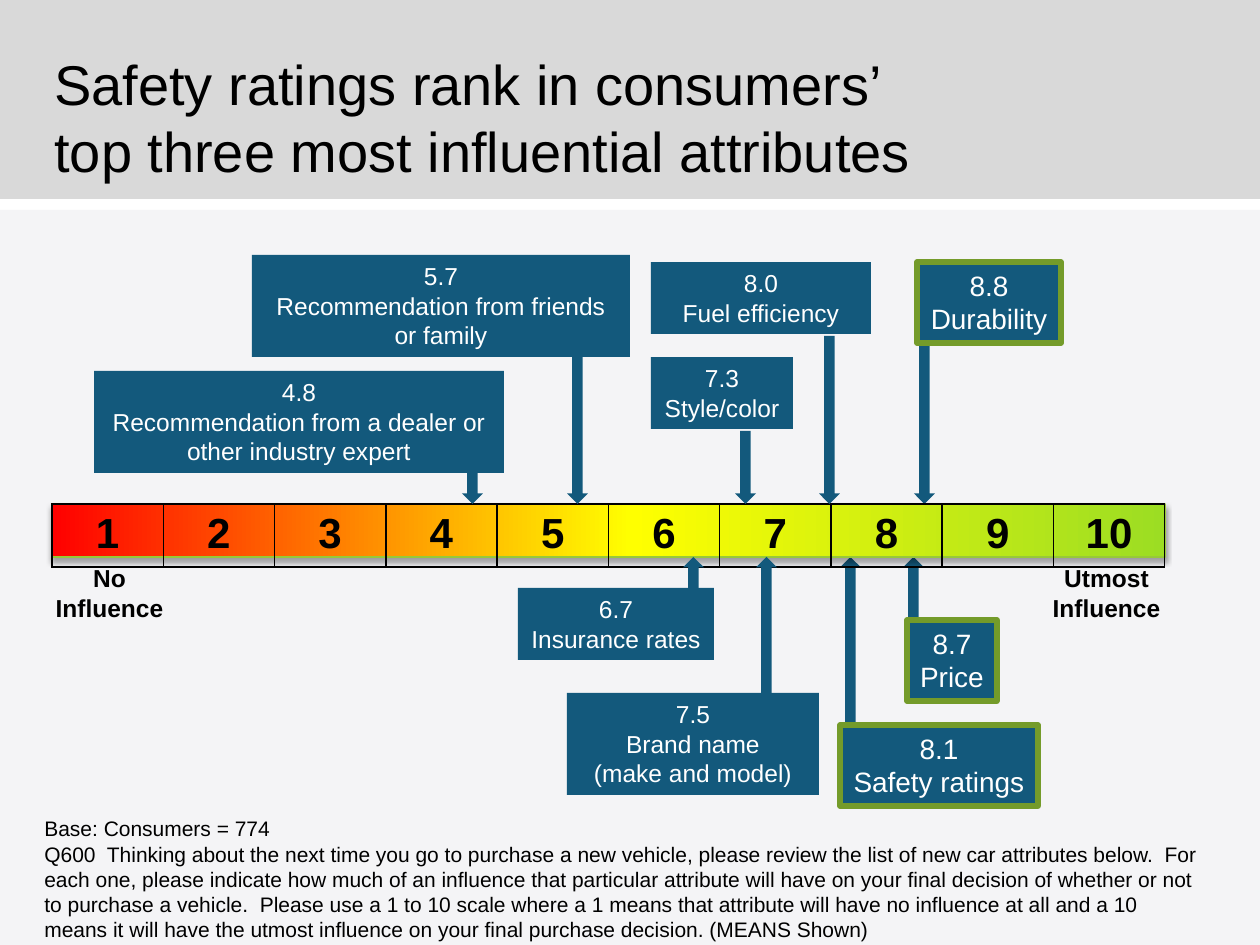
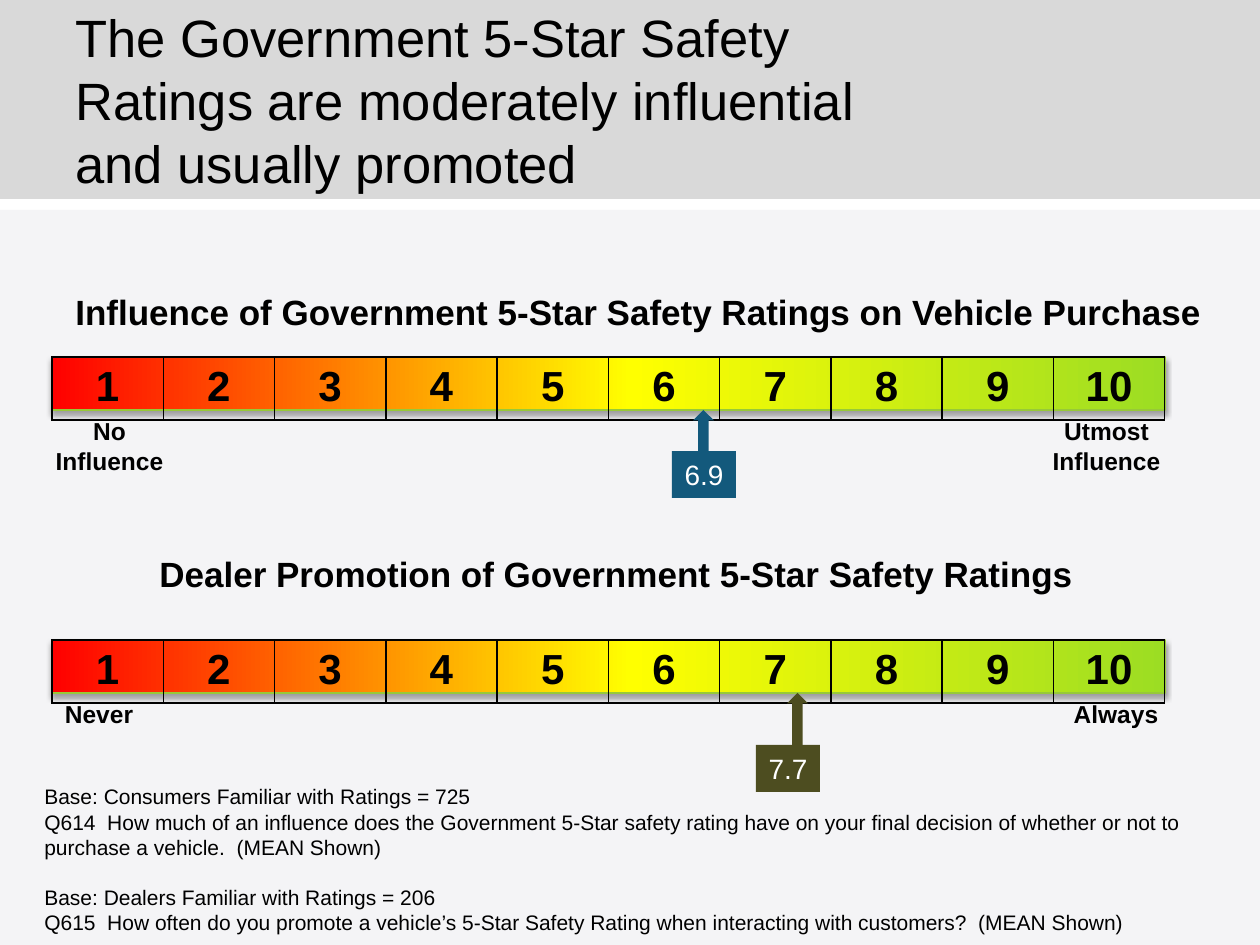
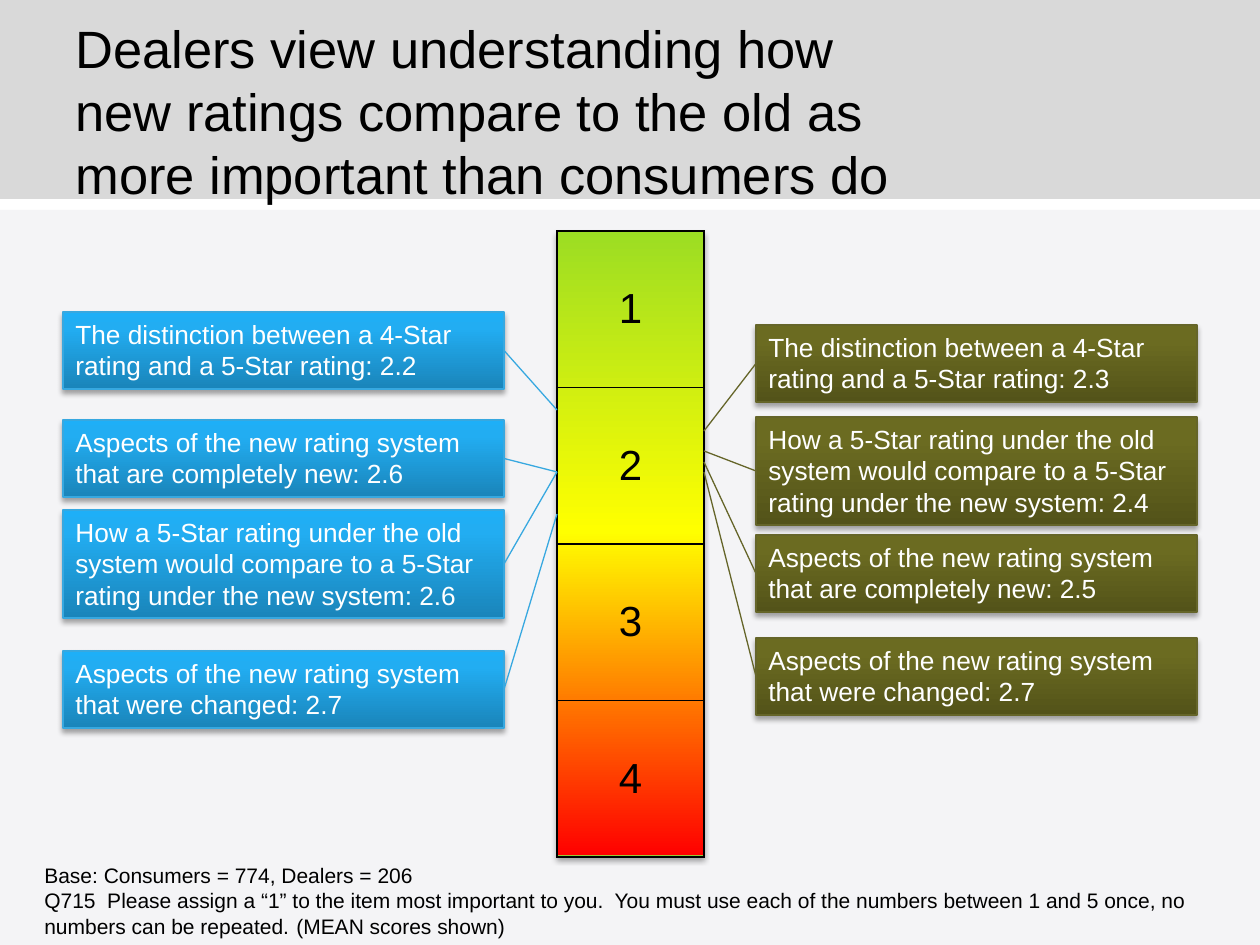
import pptx
import pptx.dml.color
import pptx.enum.shapes
import pptx.enum.text
import pptx.oxml.ns
import pptx.util
from lxml import etree

EMU_PER_PX = 914400 / 126
FONT = "Arial"
COLORS = {
    "white": "FFFFFF", "black": "000000", "band": "D9D9D9", "body": "F4F4F6",
    "navy": "13597C", "olive": "4D4D20", "highlight": "749B2A",
    "bar_line": "97C938", "blue_line": "37A8E0", "olive_line": "656529",
}
SCALE_STOPS = [(0, "FF0000"), (52, "FFFF00"), (100, "9CDD23")]
BLUE_STOPS = [(0, "1A85BA"), (80, "22ADF2"), (100, "1EAFF7")]
OLIVE_STOPS = [(0, "535319"), (80, "6B6B21"), (100, "6D6D20")]

BAR_LEFT, BAR_WIDTH, BAR_HEIGHT = 52, 1113, 53
ARROW_WIDTH = 21

# Text and box height of each rated topic
TOPICS = {
    "stars": ("The distinction between a 4-Star rating and a 5-Star rating", 77),
    "new": ("Aspects of the new rating system that are completely new", 77),
    "compare": ("How a 5-Star rating under the old system would compare to "
                "a 5-Star rating under the new system", 108),
    "changed": ("Aspects of the new rating system that were changed", 77),
}

SHAPE = pptx.enum.shapes.MSO_SHAPE
ALIGN = pptx.enum.text.PP_ALIGN
ANCHOR = pptx.enum.text.MSO_ANCHOR
qn = pptx.oxml.ns.qn


def px(n):
    return pptx.util.Emu(round(n * EMU_PER_PX))


def rgb(name):
    return pptx.dml.color.RGBColor.from_string(COLORS[name])


def sub(parent, tag, **attrs):
    el = etree.SubElement(parent, qn(tag))
    for key, value in attrs.items():
        el.set(key, str(value))
    return el


def write(tf, text, size, color="black", bold=False, align=ALIGN.LEFT, gaps=None):
    """Write one paragraph per line; gaps maps a line index to its space before."""
    for i, line in enumerate(text.split("\n")):
        p = tf.paragraphs[0] if i == 0 else tf.add_paragraph()
        p.alignment = align
        if gaps and i in gaps:
            p.space_before = pptx.util.Pt(gaps[i])
        r = p.add_run()
        r.text = line
        r.font.name, r.font.size, r.font.bold = FONT, pptx.util.Pt(size), bold
        r.font.color.rgb = rgb(color)


def frame(sp, wrap=True, grow=True, anchor=ANCHOR.TOP):
    tf = sp.text_frame
    tf.word_wrap = wrap
    tf.vertical_anchor = anchor
    if grow:
        tf.auto_size = pptx.enum.text.MSO_AUTO_SIZE.SHAPE_TO_FIT_TEXT
    return tf


def label(s, x, y, w, h, text, size, wrap=False, grow=True, anchor=ANCHOR.TOP, **fmt):
    sp = s.shapes.add_textbox(px(x), px(y), px(w), px(h))
    write(frame(sp, wrap, grow, anchor), text, size, **fmt)


def shape(s, x, y, w, h, fill=None, line=None, line_width=0.75, kind=SHAPE.RECTANGLE):
    sp = s.shapes.add_shape(kind, px(x), px(y), px(w), px(h))
    sp.shadow.inherit = False
    if fill:
        sp.fill.solid()
        sp.fill.fore_color.rgb = rgb(fill)
    if line:
        sp.line.color.rgb = rgb(line)
        sp.line.width = pptx.util.Pt(line_width)
    else:
        sp.line.fill.background()
    return sp


def shade(sp, stops, angle):
    """Give a shape a linear gradient and a soft shadow below it."""
    sp.fill.gradient()
    spPr = sp._element.spPr
    grad = spPr.find(qn("a:gradFill"))
    grad.set("rotWithShape", "1")
    gs_list = grad.find(qn("a:gsLst"))
    for gs in list(gs_list):
        gs_list.remove(gs)
    for pos, color in stops:
        sub(sub(gs_list, "a:gs", pos=pos * 1000), "a:srgbClr", val=color)
    grad.find(qn("a:lin")).set("ang", str(angle * 60000))
    shadow = sub(spPr.find(qn("a:effectLst")), "a:outerShdw", blurRad=39370,
                 dist=22860, dir=5400000, rotWithShape=0)
    sub(sub(shadow, "a:srgbClr", val=COLORS["black"]), "a:alpha", val=35000)


def border(cell):
    tcPr = cell._tc.get_or_add_tcPr()
    for i, side in enumerate(("a:lnL", "a:lnR", "a:lnT", "a:lnB")):
        ln = etree.Element(qn(side), w="12700")
        sub(sub(ln, "a:solidFill"), "a:srgbClr", val=COLORS["black"])
        tcPr.insert(i, ln)


def number_table(s, x, y, w, h, rows, cols, bold, anchor):
    table = s.shapes.add_table(rows, cols, px(x), px(y), px(w), px(h)).table
    table.first_row = table.horz_banding = False
    for n, cell in enumerate(table.iter_cells(), 1):
        cell.fill.background()
        cell.vertical_anchor = anchor
        border(cell)
        write(cell.text_frame, str(n), 24, bold=bold, align=ALIGN.CENTER)


def ten_point_scale(s, y):
    bar = shape(s, BAR_LEFT, y, BAR_WIDTH, BAR_HEIGHT, line="bar_line")
    shade(bar, SCALE_STOPS, 0)
    number_table(s, BAR_LEFT, y, BAR_WIDTH, 52, 1, 10, True, ANCHOR.TOP)


def end_label(s, x, y, w, text):
    label(s, x, y, w, 72 if "\n" in text else 43, text, 14, bold=True, align=ALIGN.CENTER)


def influence_labels(s, y):
    end_label(s, 42, y, 135, "No\nInfluence")
    end_label(s, 1039, y, 135, "Utmost\nInfluence")


def arrow(s, x, start, tip, color):
    kind = SHAPE.UP_ARROW if tip < start else SHAPE.DOWN_ARROW
    shape(s, x, min(start, tip), ARROW_WIDTH, abs(tip - start), color, kind=kind)


def callout(s, box, text, arrow_x, start, tip, size=14, color="navy", line=None, wrap=True):
    """Draw a box of text and the arrow from it to the scale."""
    arrow(s, arrow_x, start, tip, color)
    sp = shape(s, *box, color, line, 3)
    write(frame(sp, wrap), text, size, "white", align=ALIGN.CENTER)


def topic_boxes(s, x, stops, line, site, scale_x, ratings):
    """Draw one side's rated topics, each joined to its place on the scale."""
    for y, topic, score, scale_y in ratings:
        text, h = TOPICS[topic]
        sp = shape(s, x, y, 441, h, line=line)
        shade(sp, stops, 270)
        write(frame(sp), f"{text}: {score}", 15, "white")
        cxn = s.shapes.add_connector(pptx.enum.shapes.MSO_CONNECTOR.STRAIGHT,
                                     px(x), px(y), px(scale_x), px(scale_y))
        cxn.begin_connect(sp, site)
        cxn.line.color.rgb = rgb(line)
        cxn.line.width = pptx.util.Pt(0.75)
        sub(cxn._element.spPr, "a:effectLst")


def new_slide(prs, title, title_box, title_size, base, base_y, base_h, gaps=None):
    s = prs.slides.add_slide(prs.slide_layouts[6])
    shape(s, 0, 0, 1260, 199, "band")
    shape(s, 0, 210, 1260, 735, "body")
    label(s, *title_box, title, title_size, wrap=True, grow=False, anchor=ANCHOR.MIDDLE)
    label(s, 32, base_y, 1187, base_h, base, 12, wrap=True, anchor=ANCHOR.MIDDLE, gaps=gaps)
    return s


def attributes_slide(prs):
    s = new_slide(
        prs, "Safety ratings rank in consumers’ top three most influential attributes",
        (42, 38, 892, 157), 32,
        "Base: Consumers = 774\n"
        "Q600  Thinking about the next time you go to purchase a new vehicle, please review "
        "the list of new car attributes below.  For each one, please indicate how much of an "
        "influence that particular attribute will have on your final decision of whether or "
        "not to purchase a vehicle.  Please use a 1 to 10 scale where a 1 means that attribute "
        "will have no influence at all and a 10 means it will have the utmost influence on "
        "your final purchase decision. (MEANS Shown)", 809, 140)
    top = 504
    bottom = top + BAR_HEIGHT
    for box, text, x, start, tip in [
        ((907, 620, 90, 81), "8.7\nPrice", 903, 620, bottom),
        ((840, 725, 198, 81), "8.1\nSafety ratings", 840, 725, bottom),
        ((917, 262, 144, 81), "8.8\nDurability", 914, 336, top),
    ]:
        callout(s, box, text, x, start, tip, size=16, line="highlight", wrap=False)
    ten_point_scale(s, top)
    for box, text, x, start, tip in [
        ((651, 357, 142, 72), "7.3\nStyle/color", 735, 431, top),
        ((651, 262, 220, 72), "8.0\nFuel efficiency", 819, 336, top),
        ((567, 693, 252, 102), "7.5\nBrand name\n(make and model)", 756, 693, bottom),
        ((252, 255, 378, 102), "5.7\nRecommendation from friends or family", 567, 315, top),
        ((94, 371, 410, 102),
         "4.8\nRecommendation from a dealer or other industry expert", 462, 451, top),
        ((518, 588, 196, 72), "6.7\nInsurance rates", 683, 599, bottom),
    ]:
        callout(s, box, text, x, start, tip)
    influence_labels(s, bottom)


def government_slide(prs):
    s = new_slide(
        prs, "The Government 5-Star Safety Ratings are moderately influential "
        "and usually promoted", (63, 21, 851, 157), 30,
        "Base: Consumers Familiar with Ratings = 725\n"
        "Q614  How much of an influence does the Government 5-Star safety rating have on your "
        "final decision of whether or not to purchase a vehicle.  (MEAN Shown)\n"
        "Base: Dealers Familiar with Ratings = 206\n"
        "Q615  How often do you promote a vehicle’s 5-Star Safety Rating when interacting with "
        "customers?  (MEAN Shown)", 777, 165, gaps={2: 14.4})
    label(s, 63, 284, 1159, 55,
          "Influence of Government 5-Star Safety Ratings on Vehicle Purchase", 20, bold=True)
    ten_point_scale(s, 357)
    callout(s, (672, 451, 64, 47), "6.9", 693, 451, 410, size=16, wrap=False)
    influence_labels(s, 410)

    label(s, 147, 546, 946, 55,
          "Dealer Promotion of Government 5-Star Safety Ratings", 20, bold=True)
    ten_point_scale(s, 640)
    callout(s, (756, 745, 64, 47), "7.7", 787, 745, 693, size=16, color="olive", wrap=False)
    end_label(s, 52, 693, 94, "Never")
    end_label(s, 1061, 693, 110, "Always")


def importance_slide(prs):
    s = new_slide(
        prs, "Dealers view understanding how new ratings compare to the old as more "
        "important than consumers do", (63, 32, 872, 157), 30,
        "Base: Consumers = 774, Dealers = 206\n"
        "Q715  Please assign a “1” to the item most important to you.  You must use each of "
        "the numbers between 1 and 5 once, no numbers can be repeated.\t(MEAN scores shown)",
        856, 89)
    bar = shape(s, 318, 470, 625, 147, line="bar_line")
    bar.rotation = 270
    shade(bar, SCALE_STOPS, 0)
    number_table(s, 557, 231, 147, 626, 4, 1, False, ANCHOR.MIDDLE)
    topic_boxes(s, 63, BLUE_STOPS, "blue_line", 3, 557, [
        (312, "stars", 2.2, 410), (420, "new", 2.6, 472),
        (510, "compare", 2.6, 472), (651, "changed", 2.7, 514)])
    topic_boxes(s, 756, OLIVE_STOPS, "olive_line", 1, 704, [
        (325, "stars", 2.3, 431), (417, "compare", 2.4, 451),
        (535, "new", 2.5, 462), (638, "changed", 2.7, 472)])


def main():
    prs = pptx.Presentation()
    prs.slide_width, prs.slide_height = px(1260), px(945)
    attributes_slide(prs)
    government_slide(prs)
    importance_slide(prs)
    prs.save("out.pptx")


if __name__ == "__main__":
    main()
